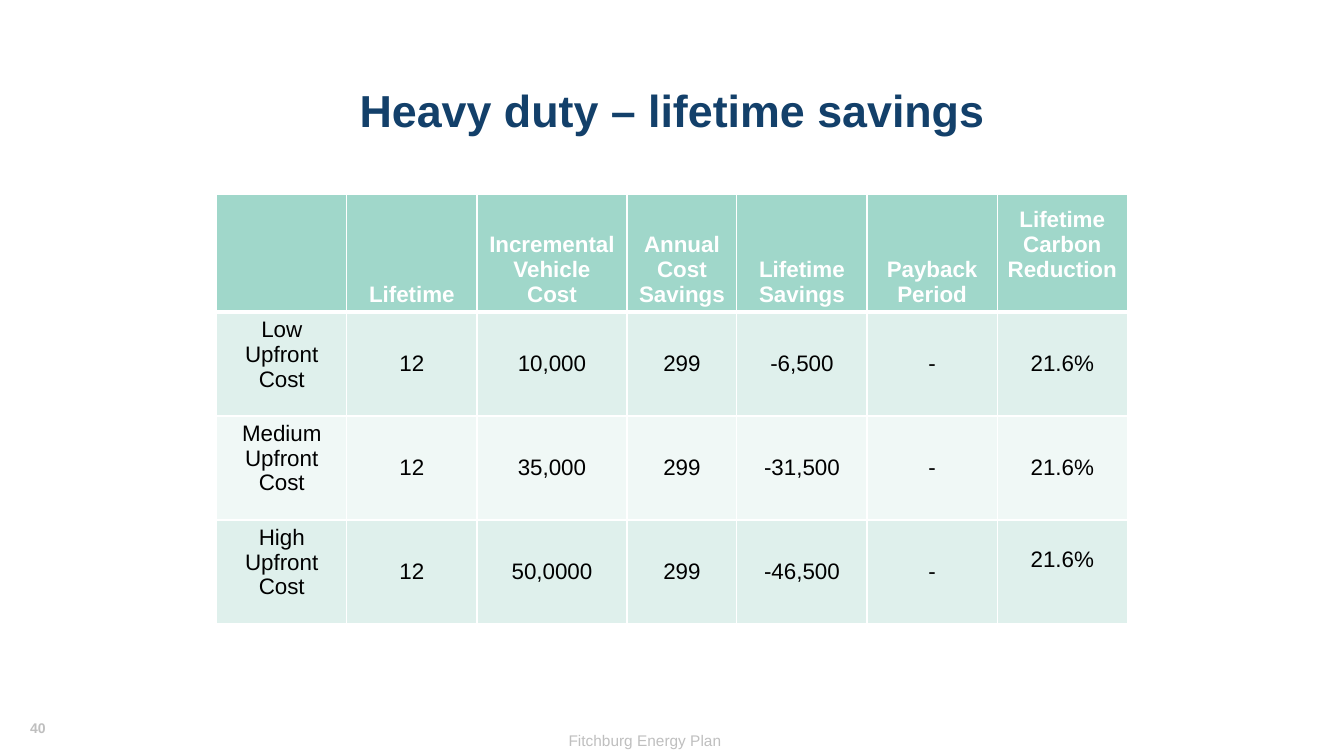
from lxml.etree import SubElement
from pptx import Presentation
from pptx.dml.color import RGBColor
from pptx.enum.text import MSO_ANCHOR, PP_ALIGN
from pptx.oxml.ns import qn
from pptx.util import Cm, Pt

HEADERS = ["", "Lifetime", "Incremental Vehicle Cost", "Annual Cost Savings",
           "Lifetime Savings", "Payback Period", "Lifetime Carbon Reduction\u00a0"]
SCENARIOS = [
    ["Low Upfront Cost", "12", "10,000", "299", "-6,500", "-", "21.6%"],
    ["Medium Upfront Cost", "12", "35,000", "299", "-31,500", "-", "21.6%"],
    ["High Upfront Cost", "12", "50,0000", "299", "-46,500", "-", "21.6%"],
]
COLUMN_WIDTHS = [3.28, 3.28, 3.78, 2.77, 3.28, 3.28, 3.28]
HEADER_HEIGHT, ROW_HEIGHT = 2.74, 2.62
HEADER_FILL, BAND_FILLS = "A0D7CA", ["DFF0EC", "F0F8F6"]
WHITE, BLACK, NAVY, GREY = "FFFFFF", "000000", "13406A", "BFBFBF"


def color(value):
    return RGBColor.from_string(value)


def add_span(para, text, size, tint, bold=False, align=PP_ALIGN.CENTER):
    para.alignment = align
    span = para.add_run()
    span.text = text
    span.font.name = "Arial"
    span.font.size = Pt(size)
    span.font.bold = bold
    span.font.color.rgb = color(tint)


def add_text(page, box, text, size, tint, bold=False, align=PP_ALIGN.CENTER,
             anchor=MSO_ANCHOR.TOP, wrap=True, line_spacing=None):
    frame = page.shapes.add_textbox(*map(Cm, box)).text_frame
    frame.word_wrap = wrap
    frame.vertical_anchor = anchor
    para = frame.paragraphs[0]
    para.line_spacing = line_spacing
    add_span(para, text, size, tint, bold, align)


def add_borders(cell, **widths):
    # Border lines must precede the fill in the cell properties
    properties = cell._tc.get_or_add_tcPr()
    for index, side in enumerate("LRTB"):
        line = SubElement(properties, qn(f"a:ln{side}"), w=str(Pt(widths.get(side, 1))))
        properties.insert(index, line)
        fill = SubElement(line, qn("a:solidFill"))
        SubElement(fill, qn("a:srgbClr"), val=WHITE)


def fill_cell(cell, text, fill, tint, anchor, bold=False):
    cell.fill.solid()
    cell.fill.fore_color.rgb = color(fill)
    cell.vertical_anchor = anchor
    if text:
        add_span(cell.text_frame.paragraphs[0], text, 16, tint, bold)


def add_title(page, box):
    add_text(page, box, "Heavy duty – lifetime savings", 32, NAVY, bold=True,
             anchor=MSO_ANCHOR.MIDDLE, line_spacing=0.9)


def add_savings_table(page, left, top):
    row_count = len(SCENARIOS) + 1
    height = HEADER_HEIGHT + ROW_HEIGHT * len(SCENARIOS)
    table = page.shapes.add_table(row_count, len(HEADERS), Cm(left), Cm(top),
                                  Cm(sum(COLUMN_WIDTHS)), Cm(height)).table
    for column, width in zip(table.columns, COLUMN_WIDTHS):
        column.width = Cm(width)
    for index, row in enumerate(table.rows):
        row.height = Cm(ROW_HEIGHT if index else HEADER_HEIGHT)

    # Header row
    for index, text in enumerate(HEADERS):
        cell = table.cell(0, index)
        fill_cell(cell, text, HEADER_FILL, WHITE, MSO_ANCHOR.BOTTOM, bold=True)
        add_borders(cell, B=3)

    # Banded scenario rows
    for row, values in enumerate(SCENARIOS, start=1):
        for index, text in enumerate(values):
            cell = table.cell(row, index)
            anchor = MSO_ANCHOR.MIDDLE if index else MSO_ANCHOR.TOP
            fill_cell(cell, text, BAND_FILLS[(row - 1) % 2], BLACK, anchor)
            add_borders(cell, T=3 if row == 1 else 1)

    # The last value sits half a line above the middle
    table.cell(row_count - 1, len(HEADERS) - 1).margin_bottom = Cm(0.75)


def add_footer(page, left, top):
    add_text(page, (left + 10.54, top + 0.3, 10.41, 0.74), "Fitchburg Energy Plan", 11, GREY)
    add_text(page, (left, top, 0.94, 0.69), "40", 10, GREY, bold=True,
             align=PP_ALIGN.LEFT, wrap=False)


def main():
    deck = Presentation()
    deck.slide_width, deck.slide_height = Cm(33.87), Cm(19.05)
    page = deck.slides.add_slide(deck.slide_layouts[6])
    add_footer(page, 0.51, 18.01)
    add_title(page, (2.34, 1.02, 29.21, 3.68))
    add_savings_table(page, 5.46, 4.9)
    deck.save("out.pptx")


if __name__ == "__main__":
    main()
